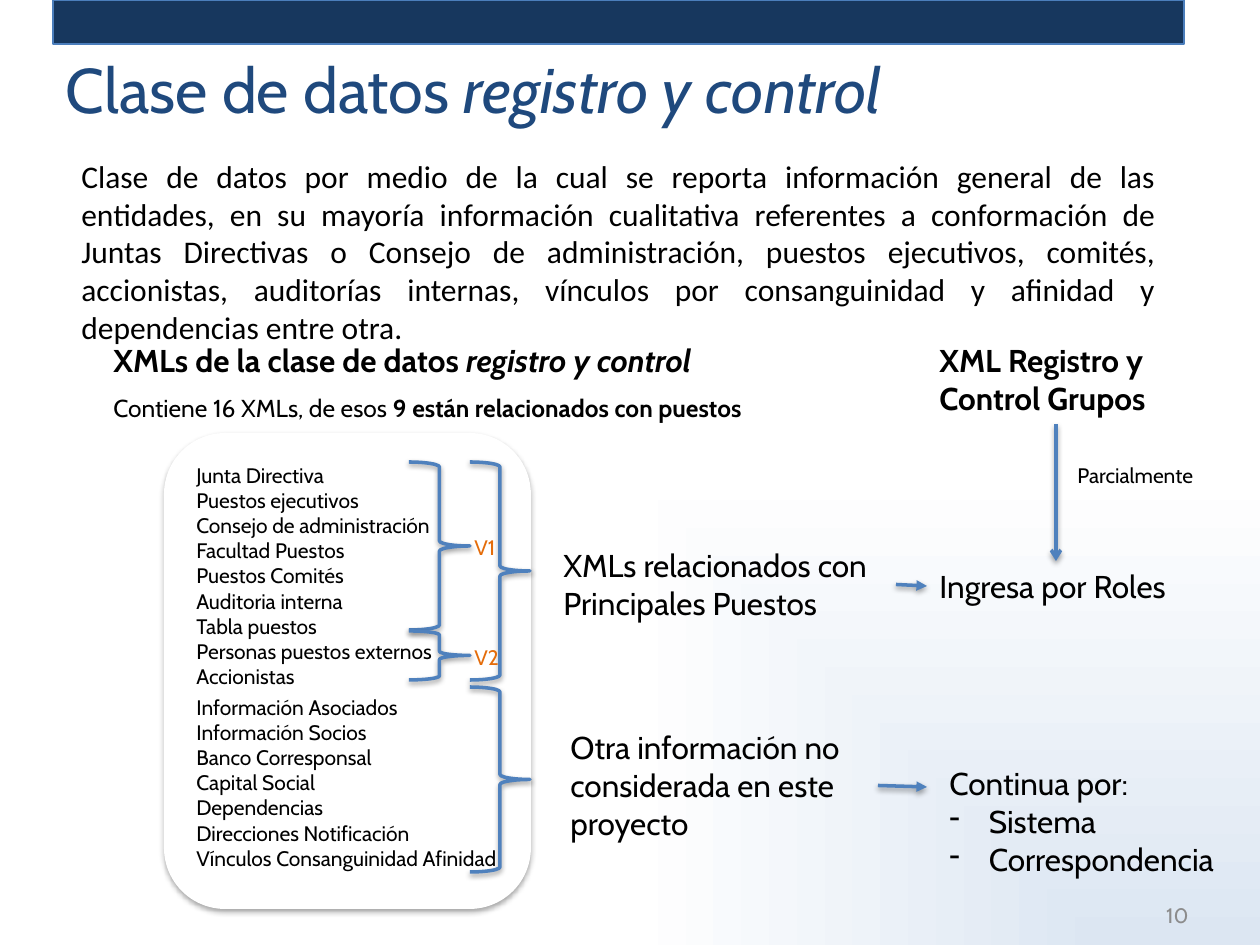
from lxml import etree
from pptx import Presentation, util as u
from pptx.dml.color import RGBColor
from pptx.enum import shapes, text
from pptx.oxml import parse_xml
from pptx.oxml.ns import nsdecls, qn

# Content: a paragraph is a string or a list of (words, style) runs
COLORS = dict(navy="17375E", edge="4B7EBC", title="1F497D", ink="000000",
              accent="4F81BD", version="E46C0A", number="8C8C8C",
              white="FFFFFF", haze="DCE6F2")
TITLE = [[("Clase de datos ", ""), ("registro y control", "i")]]
INTRO = ["Clase de datos por medio de la cual se reporta información general "
         "de las entidades, en su mayoría información cualitativa referentes a "
         "conformación de Juntas Directivas o Consejo de administración, "
         "puestos ejecutivos, comités, accionistas, auditorías internas, "
         "vínculos por consanguinidad y afinidad y dependencias entre otra."]
HEADING = [[("XMLs de la clase de datos ", "b"), ("registro y control", "bi")]]
SUBHEADING = [[("Contiene 16 XMLs, de esos ", ""),
               ("9 están relacionados con puestos", "b")]]
POSITIONS = ["Junta Directiva", "Puestos ejecutivos",
             "Consejo de administración", "Facultad Puestos",
             "Puestos Comités", "Auditoria interna", "Tabla puestos",
             "Personas puestos externos", "Accionistas"]
OTHERS = ["Información Asociados", "Información Socios", "Banco Corresponsal",
          "Capital Social", "Dependencias", "Direcciones Notificación",
          "Vínculos Consanguinidad Afinidad"]
CHANNELS = ["Continua por:", "Sistema", "Correspondencia"]

# Places in px: left, top, width, height
BRACES = [(470, 462, 60, 218), (470, 687, 60, 185),
          (409, 462, 61, 168), (409, 631, 61, 49)]
VERSIONS = [("V1", 528), ("V2", 638)]

SCALE = 914400 / 126


def px(*lengths):
    return [u.Emu(round(n * SCALE)) for n in lengths]


def rgb(name):
    return RGBColor.from_string(COLORS[name])


def write(frame, paragraphs, size=18, color="ink", font="Cabin", align="LEFT",
          anchor="TOP", wrap=True, grow=True, bullets_from=None):
    frame.word_wrap = wrap
    frame.auto_size = (text.MSO_AUTO_SIZE.SHAPE_TO_FIT_TEXT if grow
                       else text.MSO_AUTO_SIZE.NONE)
    frame.vertical_anchor = text.MSO_ANCHOR[anchor]
    for i, runs in enumerate(paragraphs):
        para = frame.add_paragraph() if i else frame.paragraphs[0]
        para.alignment = text.PP_ALIGN[align]
        for words, style in [(runs, "")] if isinstance(runs, str) else runs:
            run = para.add_run()
            run.text = words
            run.font.name, run.font.size = font, u.Pt(size)
            run.font.bold, run.font.italic = "b" in style, "i" in style
            run.font.color.rgb = rgb(color)
        if bullets_from is not None and i >= bullets_from:
            props = para._p.get_or_add_pPr()
            props.set("marL", "285750")
            props.set("indent", "-285750")
            etree.SubElement(props, qn("a:buChar")).set("char", "-")


def add_text(box, paragraphs, **style):
    label = slide.shapes.add_textbox(*px(*box))
    write(label.text_frame, paragraphs, **style)
    return label


def add_shape(kind, box, fill=None, line=None, width=2):
    shape = slide.shapes.add_shape(shapes.MSO_SHAPE[kind], *px(*box))
    shape.shadow.inherit = False
    if fill:
        shape.fill.solid()
        shape.fill.fore_color.rgb = rgb(fill)
    else:
        shape.fill.background()
    if line:
        shape.line.color.rgb, shape.line.width = rgb(line), u.Pt(width)
    else:
        shape.line.fill.background()
    return shape


def add_shadow(shape, distance, alpha):
    props = shape._element.spPr
    for old in props.findall(qn("a:effectLst")):
        props.remove(old)
    props.append(parse_xml(
        f'<a:effectLst {nsdecls("a")}><a:outerShdw blurRad="40000" '
        f'dist="{distance}" dir="5400000" rotWithShape="0">'
        f'<a:srgbClr val="{COLORS["ink"]}"><a:alpha val="{alpha}"/></a:srgbClr>'
        '</a:outerShdw></a:effectLst>'))


def add_arrow(start, end, head, source=None, target=None):
    arrow = slide.shapes.add_connector(
        shapes.MSO_CONNECTOR.STRAIGHT, *px(*start, *end))
    if source:
        arrow.begin_connect(*source)
    if target:
        arrow.end_connect(*target)
    arrow.line.color.rgb, arrow.line.width = rgb("accent"), u.Pt(2)
    etree.SubElement(arrow.line._get_or_add_ln(), qn("a:tailEnd")).set("type", head)
    add_shadow(arrow, 20000, 38000)


prs = Presentation()
prs.slide_width, prs.slide_height = px(1260, 945)
slide = prs.slides.add_slide(prs.slide_layouts[5])

# Background glow from the lower right corner
slide._element.cSld.insert(0, parse_xml(
    f'<p:bg {nsdecls("p", "a")}><p:bgPr><a:gradFill rotWithShape="1"><a:gsLst>'
    f'<a:gs pos="0"><a:srgbClr val="{COLORS["haze"]}"/></a:gs>'
    f'<a:gs pos="100000"><a:srgbClr val="{COLORS["white"]}"/></a:gs></a:gsLst>'
    '<a:path path="rect"><a:fillToRect l="100000" t="100000"/></a:path>'
    '</a:gradFill><a:effectLst/></p:bgPr></p:bg>'))

# Band, title, page number and introduction
add_shape("RECTANGLE", (53, 0, 1131, 44), "navy", "edge", 0.75)
title = slide.shapes.title
title.left, title.top, title.width, title.height = px(53, 37, 1131, 103)
write(title.text_frame, TITLE, size=36, color="title", anchor="MIDDLE", grow=False)
add_text((907, 890, 294, 50), ["10"], size=12, color="number", align="RIGHT",
         anchor="MIDDLE", grow=False)
intro = add_shape("FLOWCHART_CARD", (69, 100, 1099, 253))
write(intro.text_frame, INTRO, font="Calibri", align="JUSTIFY")

# Headings
add_text((101, 335, 614, 50), HEADING, wrap=False)
add_text((101, 387, 1101, 43), SUBHEADING, size=14)
groups = add_text((927, 335, 258, 89), [[("XML Registro y Control Grupos", "b")]])

# Card with both lists of XMLs
card = add_shape("ROUNDED_RECTANGLE", (164, 433, 367, 476), "white")
add_shadow(card, 23000, 35000)
add_text((184, 456, 267, 242), POSITIONS, size=12, wrap=False)
add_text((184, 688, 329, 190), OTHERS, size=12, wrap=False)
for box in BRACES:
    add_shadow(add_shape("RIGHT_BRACE", box, line="accent"), 20000, 38000)
for version, top in VERSIONS:
    add_text((462, top, 67, 38), [version], size=12, color="version")

# What each group is and where it enters
related = add_text((551, 540, 345, 89),
                   ["XMLs relacionados con Principales Puestos"])
other = add_text((558, 722, 320, 127),
                 ["Otra información no considerada en este proyecto"])
roles = add_text((927, 561, 258, 50), ["Ingresa por Roles"], wrap=False)
add_text((937, 758, 310, 127), CHANNELS, bullets_from=1)
add_text((1065, 456, 144, 38), ["Parcialmente"], size=12, wrap=False)

# Arrows
add_arrow((896, 585), (927, 585), "triangle", (related, 3), (roles, 1))
add_arrow((878, 786), (927, 787), "triangle", (other, 3))
add_arrow((1056, 424), (1057, 561), "arrow", (groups, 2), (roles, 0))

prs.save("out.pptx")
